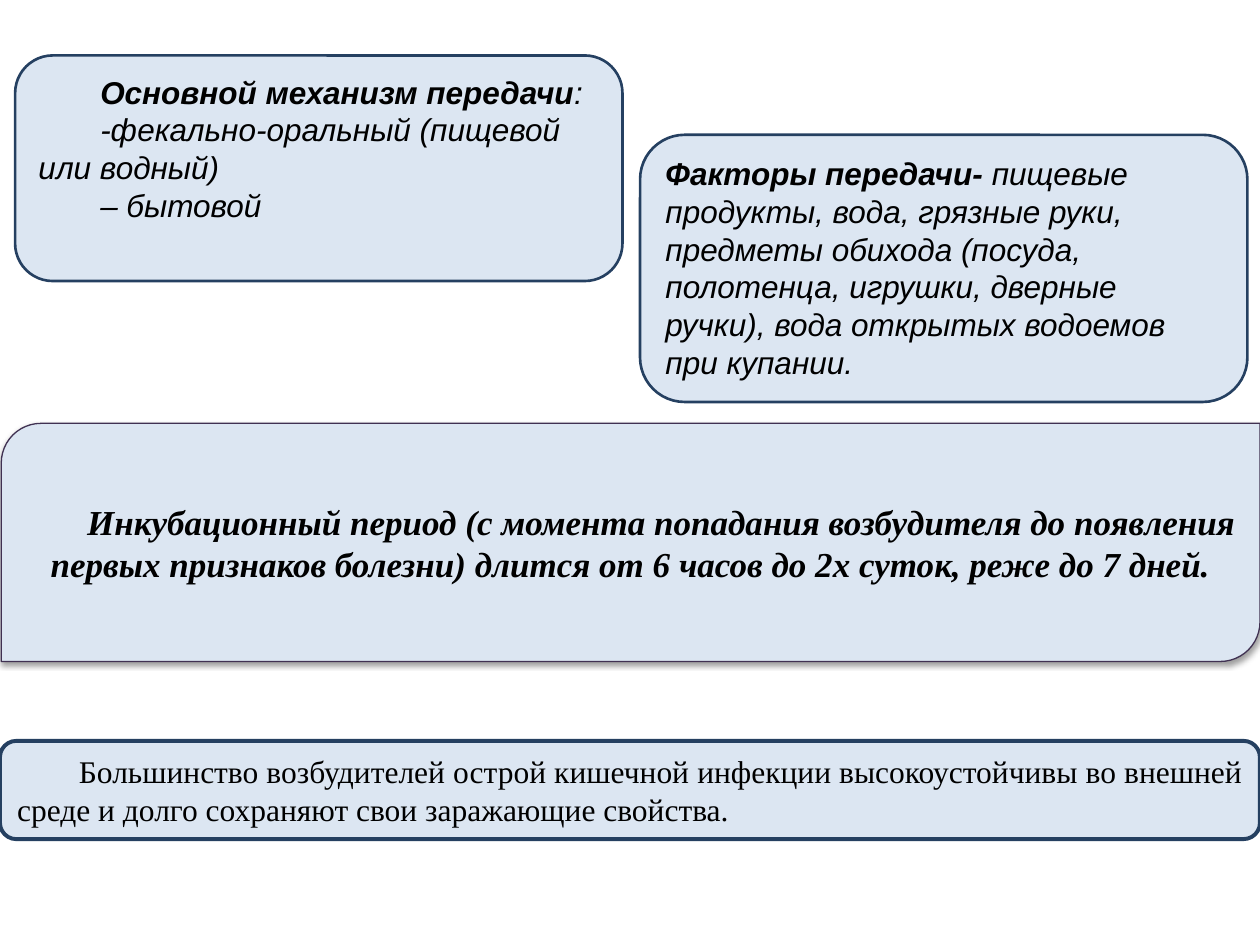
from dataclasses import dataclass

from lxml.etree import SubElement
from pptx import Presentation
from pptx.dml.color import RGBColor
from pptx.enum.shapes import MSO_SHAPE
from pptx.enum.text import MSO_ANCHOR, PP_ALIGN
from pptx.oxml.ns import qn
from pptx.util import Emu, Pt

PX = 9144  # 100 px to the inch

BLACK = RGBColor(0x00, 0x00, 0x00)
PALE_BLUE = RGBColor(0xDC, 0xE6, 0xF2)
NAVY = RGBColor(0x25, 0x40, 0x61)
PURPLE = RGBColor(0x40, 0x31, 0x52)

# Text formats
ARIAL = dict(name="Arial", size=Pt(18), italic=True, bold=False)
ARIAL_BOLD = {**ARIAL, "bold": True}
TIMES = dict(name="Times New Roman", size=Pt(18), italic=False, bold=False)
TIMES_BOLD = dict(name="Times New Roman", size=Pt(20), italic=True, bold=True)


@dataclass
class Box:
    left: int
    top: int
    width: int
    height: int
    paragraphs: list[list[tuple[str, dict]]]
    line_pt: float = 1.5
    line: RGBColor = NAVY
    shape: MSO_SHAPE = MSO_SHAPE.ROUNDED_RECTANGLE
    anchor: MSO_ANCHOR = MSO_ANCHOR.TOP
    align: PP_ALIGN = PP_ALIGN.LEFT
    indent: int = 49
    shadow: bool = False


BOXES = [
    # Transmission mechanism
    Box(12, 44, 482, 179, [
        [("Основной механизм передачи", ARIAL_BOLD), (":", ARIAL)],
        [("-фекально-оральный (пищевой или водный)", ARIAL)],
        [("– бытовой", ARIAL)],
    ]),
    # Transmission factors
    Box(508, 107, 482, 212, [
        [("Факторы передачи-", ARIAL_BOLD),
         (" пищевые продукты, вода, грязные руки, предметы обихода (посуда, "
          "полотенца, игрушки, дверные ручки), вода открытых водоемов при "
          "купании.", ARIAL)],
    ], indent=0),
    # Incubation period
    Box(1, 336, 999, 189, [
        [("Инкубационный период (с момента попадания возбудителя до появления "
          "первых признаков болезни) длится от 6 часов до 2х суток, реже до "
          "7 дней.", TIMES_BOLD)],
    ], line_pt=0.75, line=PURPLE, shape=MSO_SHAPE.ROUND_2_DIAG_RECTANGLE,
        anchor=MSO_ANCHOR.MIDDLE, align=PP_ALIGN.CENTER, shadow=True),
    # Resistance of the pathogens
    Box(0, 588, 1000, 78, [
        [("Большинство возбудителей острой кишечной инфекции высокоустойчивы "
          "во внешней среде и долго сохраняют свои заражающие свойства.",
          TIMES)],
    ], line_pt=2.25, align=PP_ALIGN.JUSTIFY),
]


def add_shadow(sp) -> None:
    effects = sp._element.spPr.find(qn("a:effectLst"))
    outer = SubElement(effects, qn("a:outerShdw"), blurRad=str(Pt(3.1)),
                       dist=str(Pt(1.6)), dir="5400000", rotWithShape="0")
    color = SubElement(outer, qn("a:srgbClr"), val=str(BLACK))
    SubElement(color, qn("a:alpha"), val="38000")


def add_box(s, box: Box) -> None:
    frame = (box.left, box.top, box.width, box.height)
    sp = s.shapes.add_shape(box.shape, *(Emu(v * PX) for v in frame))
    sp.fill.solid()
    sp.fill.fore_color.rgb = PALE_BLUE
    sp.line.color.rgb = box.line
    sp.line.width = Pt(box.line_pt)
    sp.shadow.inherit = False
    if box.shadow:
        add_shadow(sp)

    tf = sp.text_frame
    tf.word_wrap = True
    tf.vertical_anchor = box.anchor
    for i, runs in enumerate(box.paragraphs):
        p = tf.add_paragraph() if i else tf.paragraphs[0]
        p.alignment = box.align
        pPr = p._p.get_or_add_pPr()
        pPr.set("marL", "0")
        pPr.set("indent", str(box.indent * PX))
        for text, fmt in runs:
            r = p.add_run()
            r.text = text
            r.font.color.rgb = BLACK
            for key, value in fmt.items():
                setattr(r.font, key, value)


def main() -> None:
    prs = Presentation()
    prs.slide_width, prs.slide_height = Emu(1000 * PX), Emu(750 * PX)
    s = prs.slides.add_slide(prs.slide_layouts[6])
    for box in BOXES:
        add_box(s, box)
    prs.save("out.pptx")


if __name__ == "__main__":
    main()
